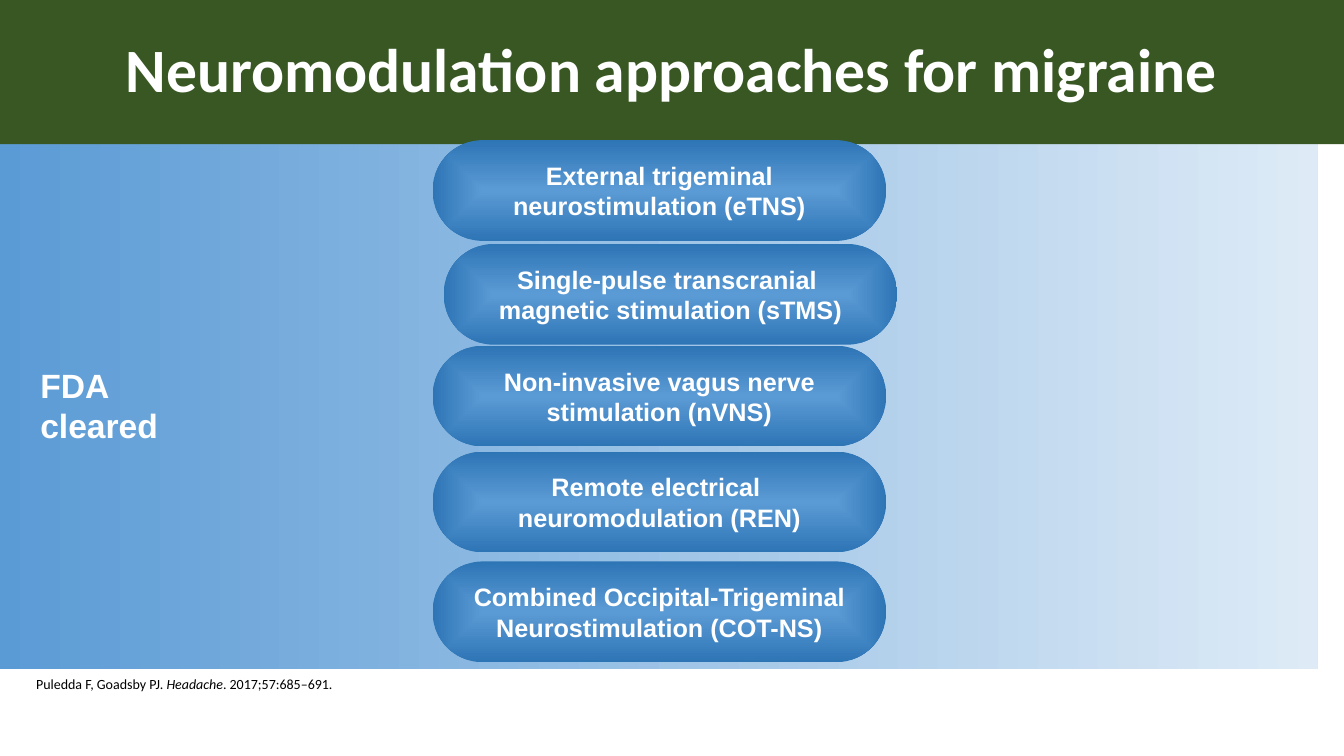
from dataclasses import dataclass

from lxml import etree
from pptx import Presentation
from pptx.dml.color import RGBColor
from pptx.enum.shapes import MSO_SHAPE
from pptx.enum.text import MSO_ANCHOR, MSO_AUTO_SIZE, PP_ALIGN
from pptx.oxml.ns import qn
from pptx.shapes.autoshape import Shape
from pptx.slide import Slide
from pptx.util import Inches, Pt

RECTANGLE = MSO_SHAPE.RECTANGLE
ROUNDED = MSO_SHAPE.ROUNDED_RECTANGLE
MIDDLE = MSO_ANCHOR.MIDDLE
BOTTOM = MSO_ANCHOR.BOTTOM
NO_AUTOFIT = MSO_AUTO_SIZE.NONE
LEFT = PP_ALIGN.LEFT
CENTER = PP_ALIGN.CENTER

WHITE = "FFFFFF"
BLACK = "000000"
GREEN = "385723"
BLUE = "5B9BD5"
DARK_BLUE = "2E75B6"
PALE_BLUE = "DEEBF7"

SLIDE_WIDTH = 13.33
PILL_LEFT = 4.29
PILL_WIDTH = 4.5
PILL_HEIGHT = 1


@dataclass(frozen=True)
class Approach:
    """One neuromodulation approach and the place of its pill."""

    text: str
    top: float
    left: float = PILL_LEFT


APPROACHES = [
    Approach("Single-pulse transcranial \vmagnetic stimulation (sTMS)", 2.42, 4.4),
    Approach("External trigeminal neurostimulation (eTNS)", 1.39),
    Approach("Non‐invasive vagus nerve stimulation (nVNS)", 3.43),
    Approach("Remote electrical \vneuromodulation (REN)", 4.48),
    Approach("Combined Occipital-Trigeminal Neurostimulation (COT-NS)", 5.57),
]


def color(value: str) -> RGBColor:
    """Turn a hex string into a colour."""
    return RGBColor.from_string(value)


def place(shape: Shape, left: float, top: float, width: float, height: float) -> None:
    """Move and size a shape, in inches."""
    shape.left, shape.top = Inches(left), Inches(top)
    shape.width, shape.height = Inches(width), Inches(height)


def set_margins(shape: Shape, left: float, top: float, right: float, bottom: float) -> None:
    """Set the text insets of a shape, in inches."""
    frame = shape.text_frame
    frame.margin_left, frame.margin_top = Inches(left), Inches(top)
    frame.margin_right, frame.margin_bottom = Inches(right), Inches(bottom)


def format_text(shape: Shape, font_name: str, size: float, font_color: str,
                bold: bool, alignment: PP_ALIGN, anchor: MSO_ANCHOR) -> None:
    """Format every run of a shape alike."""
    frame = shape.text_frame
    frame.word_wrap = True
    frame.auto_size = NO_AUTOFIT
    frame.vertical_anchor = anchor
    for paragraph in frame.paragraphs:
        paragraph.alignment = alignment
        for run in paragraph.runs:
            run.font.name = font_name
            run.font.size = Pt(size)
            run.font.bold = bold
            run.font.color.rgb = color(font_color)


def fill_gradient(shape: Shape, start: str, end: str, from_center: bool = False) -> None:
    """Fill a shape from left to right, or from its centre outwards."""
    shape.fill.gradient()
    shape.fill.gradient_angle = 0
    for stop, value, position in zip(shape.fill.gradient_stops, (start, end), (0, 1)):
        stop.color.rgb = color(value)
        stop.position = position
    if from_center:
        gradient = shape.element.spPr.find(qn("a:gradFill"))
        gradient.remove(gradient.find(qn("a:lin")))
        shade = etree.SubElement(gradient, qn("a:path"), {"path": "shape"})
        sides = dict.fromkeys("ltrb", "50000")
        etree.SubElement(shade, qn("a:fillToRect"), sides)


def add_plain_shape(slide: Slide, kind: MSO_SHAPE, left: float, top: float,
                    width: float, height: float) -> Shape:
    """Add a shape without line or shadow."""
    shape = slide.shapes.add_shape(
        kind, Inches(left), Inches(top), Inches(width), Inches(height))
    shape.shadow.inherit = False
    shape.line.fill.background()
    return shape


def add_panel(slide: Slide) -> Shape:
    """Add the wide panel that names the status."""
    panel = add_plain_shape(slide, RECTANGLE, 0, 1.39, 13.07, 5.25)
    fill_gradient(panel, BLUE, PALE_BLUE)
    panel.text_frame.text = "FDA\ncleared"
    set_margins(panel, 0.4, 0.05, 0.1, 0.05)
    format_text(panel, "Arial", 24, WHITE, True, LEFT, MIDDLE)
    return panel


def set_title(slide: Slide, panel: Shape) -> None:
    """Turn the title into a band in front of the panel."""
    title = slide.shapes.title
    panel.element.addnext(title.element)
    place(title, 0, 0, SLIDE_WIDTH, 1.43)
    title.fill.solid()
    title.fill.fore_color.rgb = color(GREEN)
    title.text_frame.text = "Neuromodulation approaches for migraine"
    title.text_frame.paragraphs[0].line_spacing = 0.9
    format_text(title, "Calibri", 44, WHITE, True, CENTER, MIDDLE)


def add_reference(slide: Slide) -> None:
    """Add the citation with its journal in italics."""
    reference = slide.shapes.add_textbox(
        Inches(0.26), Inches(6.52), Inches(12.71), Inches(0.4))
    paragraph = reference.text_frame.paragraphs[0]
    paragraph.line_spacing = 0.9
    for text in ("Puledda F, Goadsby PJ. ", "Headache", ". 2017;57:685–691."):
        run = paragraph.add_run()
        run.text = text
        run.font.italic = text == "Headache"
    format_text(reference, "Calibri", 10, BLACK, False, LEFT, BOTTOM)


def add_pill(slide: Slide, approach: Approach) -> None:
    """Add the pill of one approach."""
    pill = add_plain_shape(
        slide, ROUNDED, approach.left, approach.top, PILL_WIDTH, PILL_HEIGHT)
    pill.adjustments[0] = 0.5
    fill_gradient(pill, BLUE, DARK_BLUE, from_center=True)
    pill.text_frame.text = approach.text
    set_margins(pill, 0, 0, 0, 0)
    format_text(pill, "Arial", 18, WHITE, True, CENTER, MIDDLE)


def main() -> None:
    """Build and save the slide."""
    presentation = Presentation()
    presentation.slide_width = Inches(SLIDE_WIDTH)
    presentation.slide_height = Inches(7.5)
    slide = presentation.slides.add_slide(presentation.slide_layouts[5])
    panel = add_panel(slide)
    set_title(slide, panel)
    add_reference(slide)
    for approach in APPROACHES:
        add_pill(slide, approach)
    presentation.save("out.pptx")


if __name__ == "__main__":
    main()
